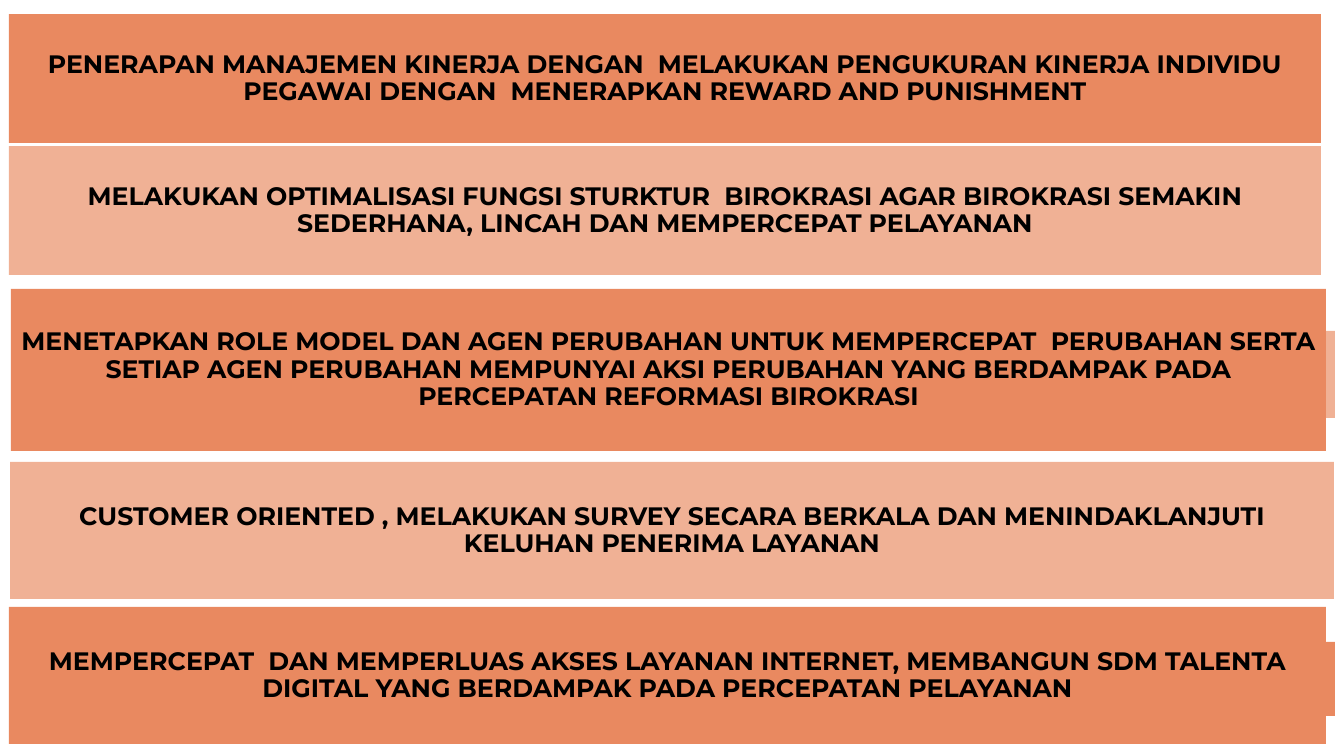
from dataclasses import dataclass

from pptx import Presentation
from pptx.dml.color import RGBColor
from pptx.enum.shapes import MSO_SHAPE
from pptx.enum.text import MSO_ANCHOR, PP_ALIGN
from pptx.util import Emu, Pt

PX_PER_INCH = 100.8
DARK = "E98960"
LIGHT = "F0B195"


@dataclass
class Bar:
    left: int
    top: int
    width: int
    height: int
    fill: str
    inset: int = 0
    text: str = ""


# Bars from top to bottom; a bar without text lies behind the next one
BARS = [
    Bar(9, 14, 1312, 129, DARK, 4,
        "PENERAPAN MANAJEMEN KINERJA DENGAN  MELAKUKAN PENGUKURAN KINERJA "
        "INDIVIDU PEGAWAI DENGAN  MENERAPKAN REWARD AND PUNISHMENT"),
    Bar(9, 146, 1312, 129, LIGHT, 4,
        "MELAKUKAN OPTIMALISASI FUNGSI STURKTUR  BIROKRASI AGAR BIROKRASI "
        "SEMAKIN SEDERHANA, LINCAH DAN MEMPERCEPAT PELAYANAN"),
    Bar(14, 331, 1321, 87, LIGHT),
    Bar(11, 289, 1315, 162, DARK, 5,
        "MENETAPKAN ROLE MODEL DAN AGEN PERUBAHAN UNTUK MEMPERCEPAT  "
        "PERUBAHAN SERTA SETIAP AGEN PERUBAHAN MEMPUNYAI AKSI PERUBAHAN "
        "YANG BERDAMPAK PADA PERCEPATAN REFORMASI BIROKRASI"),
    Bar(10, 462, 1324, 137, LIGHT, 6,
        "CUSTOMER ORIENTED , MELAKUKAN SURVEY SECARA BERKALA DAN "
        "MENINDAKLANJUTI KELUHAN PENERIMA LAYANAN"),
    Bar(12, 642, 1323, 74, DARK),
    Bar(9, 607, 1317, 137, DARK, 5,
        "MEMPERCEPAT  DAN MEMPERLUAS AKSES LAYANAN INTERNET, MEMBANGUN SDM "
        "TALENTA DIGITAL YANG BERDAMPAK PADA PERCEPATAN PELAYANAN"),
]


def px(n: int) -> Emu:
    return Emu(round(n * 914400 / PX_PER_INCH))


def color(value: str) -> RGBColor:
    return RGBColor.from_string(value)


def add_bar(slide, bar: Bar) -> None:
    sp = slide.shapes.add_shape(MSO_SHAPE.RECTANGLE, px(bar.left), px(bar.top),
                                px(bar.width), px(bar.height))
    sp.shadow.inherit = False
    sp.fill.solid()
    sp.fill.fore_color.rgb = color(bar.fill)
    sp.line.fill.background()
    if not bar.text:
        return

    # Centred bold caption
    tf = sp.text_frame
    tf.word_wrap = True
    tf.vertical_anchor = MSO_ANCHOR.MIDDLE
    tf.margin_left = tf.margin_right = px(bar.inset)
    tf.margin_top = tf.margin_bottom = px(bar.inset)
    tf.text = bar.text
    p = tf.paragraphs[0]
    p.alignment = PP_ALIGN.CENTER
    p.line_spacing = 0.9
    font = p.runs[0].font
    font.name = "Montserrat"
    font.size = Pt(18)
    font.bold = True
    font.color.rgb = color("000000")


def main() -> None:
    prs = Presentation()
    prs.slide_width = px(1344)
    prs.slide_height = px(756)
    s = prs.slides.add_slide(prs.slide_layouts[6])
    for bar in BARS:
        add_bar(s, bar)
    prs.save("out.pptx")


if __name__ == "__main__":
    main()
